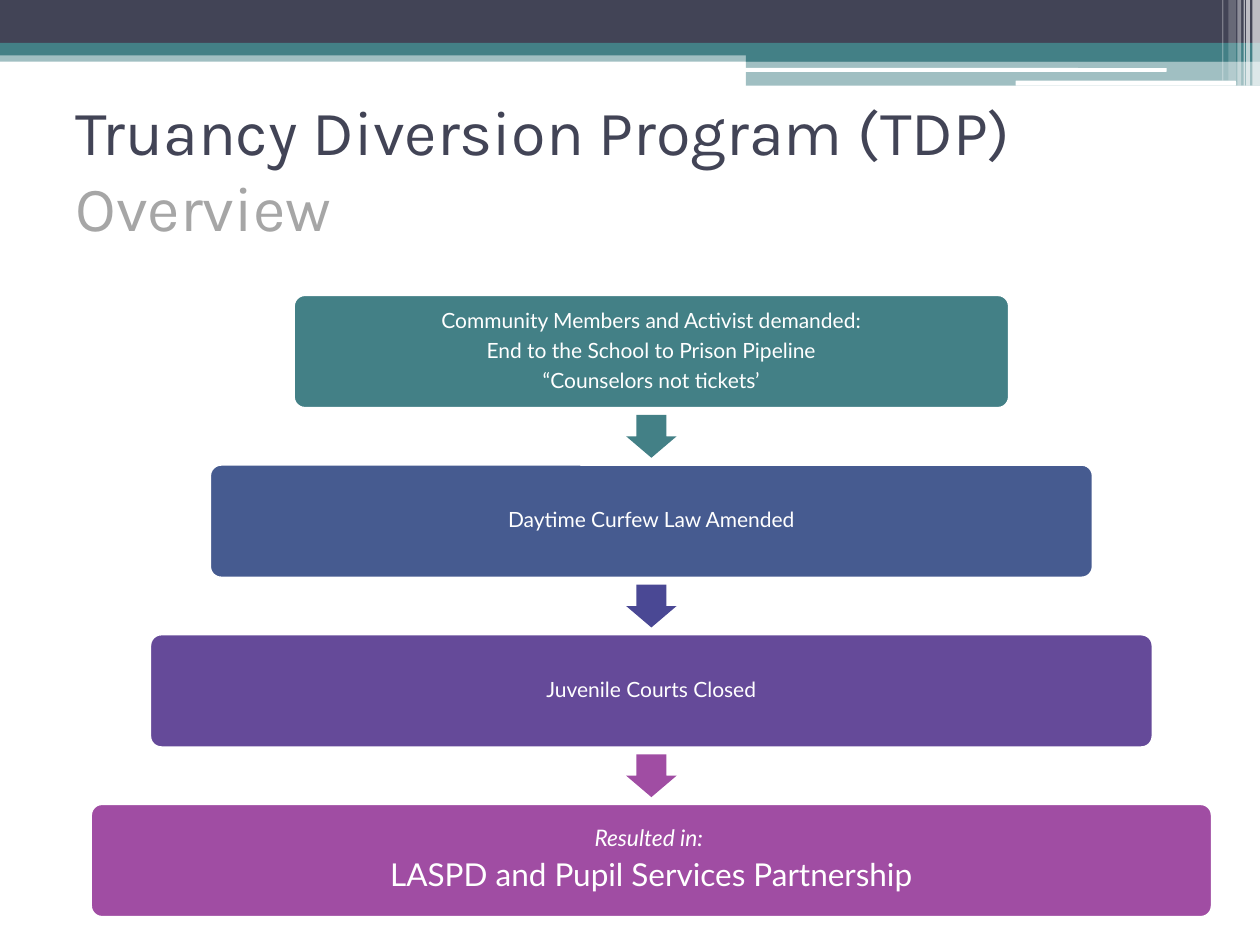
from lxml import etree
from pptx import Presentation
from pptx.dml.color import RGBColor
from pptx.enum import shapes, text
from pptx.oxml.ns import qn
from pptx.util import Inches, Pt

WHITE = RGBColor(0xFF, 0xFF, 0xFF)
NAVY = RGBColor(0x42, 0x44, 0x56)
TEAL = RGBColor(0x43, 0x80, 0x86)
GREY = RGBColor(0xA6, 0xA6, 0xA6)
BLUE = RGBColor(0x46, 0x5B, 0x90)
INDIGO = RGBColor(0x4A, 0x48, 0x94)
VIOLET = RGBColor(0x65, 0x4A, 0x99)
PLUM = RGBColor(0xA0, 0x4D, 0xA3)
KIND = shapes.MSO_SHAPE

# Each step: box width, box colour, colour of the arrow below, lines of (text, size, italic)
STEPS = [
    (5.68, TEAL, TEAL, [("Community Members and Activist demanded:", 12, False),
                        ("End to the School to Prison Pipeline", 12, False),
                        ("“Counselors not tickets’", 12, False)]),
    (7.01, BLUE, INDIGO, [("Daytime Curfew Law Amended", 12, False)]),
    (7.96, VIOLET, PLUM, [("Juvenile Courts Closed", 12, False)]),
    (8.9, PLUM, None, [("Resulted in: ", 13, True),
                       ("LASPD and Pupil Services Partnership", 18, False)]),
]


def add_block(slide, kind, box, color, alpha=100):
    """Add a filled shape without outline; alpha is opacity in percent."""
    block = slide.shapes.add_shape(kind, *map(Inches, box))
    block.shadow.inherit = False
    block.fill.solid()
    block.fill.fore_color.rgb = color
    block.line.fill.background()
    if alpha < 100:
        tone = block.fill._xPr.find(".//" + qn("a:srgbClr"))
        etree.SubElement(tone, qn("a:alpha"), val=str(alpha * 1000))
    return block


def add_banner(slide, left, top, width):
    right = left + width
    half = left + 5.92
    for x, y, wide, high, color, alpha in [
        (left, 0.4, width, 0.09, TEAL, 50),
        (left, 0, width, 0.34, NAVY, 100),
        (left, 0.34, width, 0.1, TEAL, 100),
        (half, 0.39, right - half, 0.1, TEAL, 100),
        (half, 0.48, right - half, 0.2, TEAL, 50),
    ]:
        add_block(slide, KIND.RECTANGLE, (x, top + y, wide, high), color, alpha)
    for x, y, wide, high in [(5.91, 0.54, 3.35, 0.03), (8.06, 0.64, 1.75, 0.04)]:
        add_block(slide, KIND.ROUNDED_RECTANGLE, (left + x, top + y, wide, high), WHITE)
    # Stripes: distance from the right edge, width, height, opacity
    for gap, wide, high, alpha in [
        (0.06, 0.06, 0.68, 65), (0.11, 0.03, 0.68, 65), (0.13, 0.01, 0.68, 60),
        (0.18, 0.03, 0.68, 40), (0.25, 0.06, 0.64, 20), (0.3, 0.01, 0.64, 30),
    ]:
        add_block(slide, KIND.RECTANGLE, (right - gap, top, wide, high), WHITE, alpha)


def set_title(slide, left, top, width, height):
    title = slide.shapes.title
    title.left, title.top, title.width, title.height = map(
        Inches, (left, top, width, height))
    frame = title.text_frame
    frame.word_wrap = True
    frame.auto_size = text.MSO_AUTO_SIZE.NONE
    frame.vertical_anchor = text.MSO_ANCHOR.MIDDLE
    para = frame.paragraphs[0]
    para.alignment = text.PP_ALIGN.LEFT
    para.font.name, para.font.size = "Karla", Pt(36)
    for words, color in [("Truancy Diversion Program (TDP) ", NAVY), ("Overview", GREY)]:
        run = para.add_run()
        run.text = words
        run.font.color.rgb = color


def write_lines(frame, lines):
    frame.word_wrap = True
    frame.vertical_anchor = text.MSO_ANCHOR.MIDDLE
    frame.margin_left = frame.margin_right = Inches(0.05)
    frame.margin_top = frame.margin_bottom = Inches(0.05)
    for i, (words, size, slant) in enumerate(lines):
        para = frame.paragraphs[0] if i == 0 else frame.add_paragraph()
        para.text = words
        para.alignment = text.PP_ALIGN.CENTER
        para.line_spacing = 0.9
        para.space_after = Pt(round(size * 0.35, 1))
        font = para.font
        font.name, font.size, font.italic = "Lato", Pt(size), slant
        font.color.rgb = WHITE


def add_flow(slide, left, top, width, height):
    """Stack the steps from top to bottom, centred, with an arrow in each gap."""
    high, wide, tall = 0.9, 0.4, 0.34
    pitch = (height - high) / (len(STEPS) - 1)
    mid = left + width / 2
    for i, (span, color, tint, lines) in enumerate(STEPS):
        y = top + i * pitch
        box = add_block(slide, KIND.ROUNDED_RECTANGLE,
                        (mid - span / 2, y, span, high), color)
        box.adjustments[0] = 0.1
        box.line.color.rgb = WHITE
        box.line.width = Pt(1.5)
        write_lines(box.text_frame, lines)
        if tint is not None:
            gap = (pitch - high - tall) / 2
            arrow = add_block(slide, KIND.DOWN_ARROW,
                              (mid - wide / 2, y + high + gap, wide, tall), tint)
            arrow.adjustments[0], arrow.adjustments[1] = 0.6, 0.5


def main():
    deck = Presentation()
    deck.slide_width, deck.slide_height = Inches(10), Inches(7.5)
    slide = deck.slides.add_slide(deck.slide_layouts[5])
    add_banner(slide, 0, 0, 10)
    set_title(slide, 0.5, 0.75, 9, 1.17)
    add_flow(slide, 0.72, 2.34, 8.9, 4.94)
    deck.save("out.pptx")


if __name__ == "__main__":
    main()
